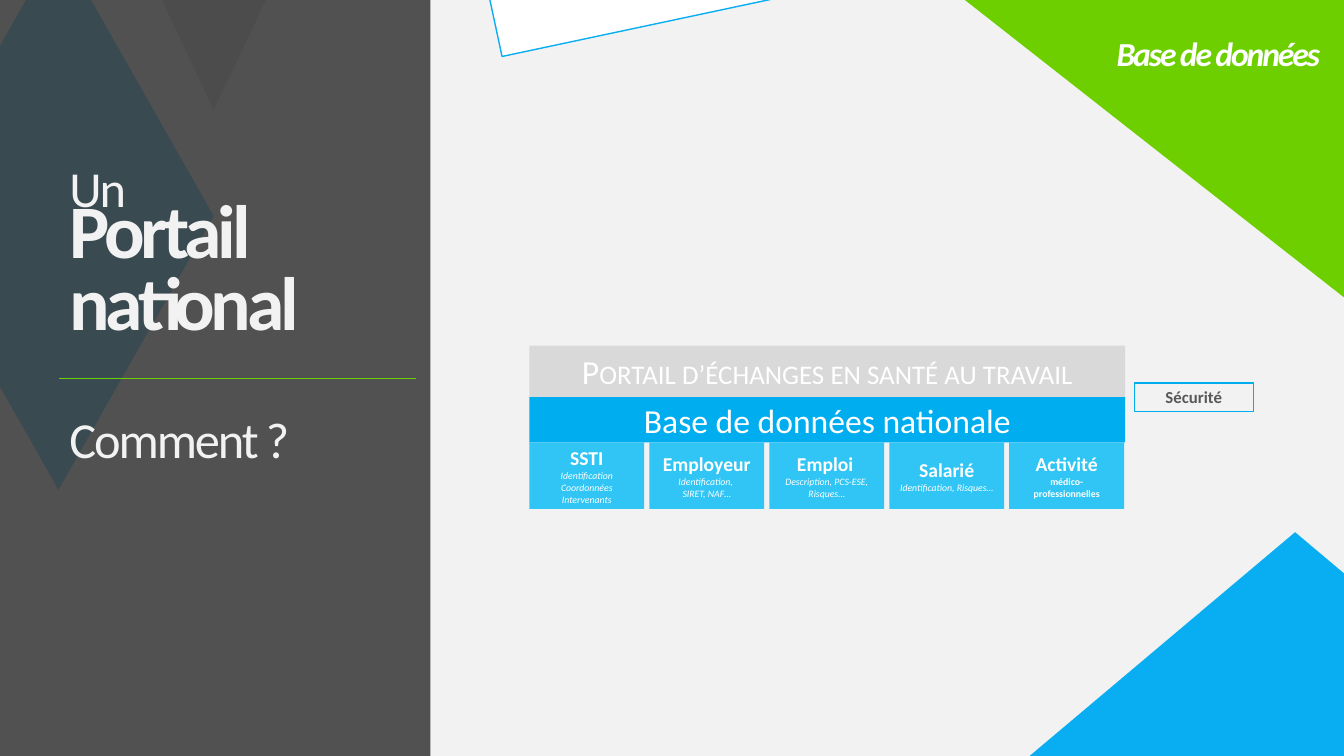
import pptx
import pptx.dml.color
import pptx.enum.shapes
import pptx.enum.text
import pptx.oxml.ns
import pptx.util
from lxml import etree

Inches = pptx.util.Inches
Pt = pptx.util.Pt
rgb = pptx.dml.color.RGBColor.from_string
qn = pptx.oxml.ns.qn
Preset = pptx.enum.shapes.MSO_SHAPE
Align = pptx.enum.text.PP_ALIGN
Anchor = pptx.enum.text.MSO_ANCHOR

GREEN, BLUE, SKY, PALE_BLUE = "6DCF00", "09AEF2", "00ADEE", "30C5F4"
WHITE, LIGHT = "FFFFFF", "F2F2F2"


def style(shape, fill=None, line=None):
    """Set fill and outline, without shadow."""
    shape.shadow.inherit = False
    if fill:
        shape.fill.solid()
        shape.fill.fore_color.rgb = rgb(fill)
    else:
        shape.fill.background()
    if line:
        shape.line.color.rgb = rgb(line)
        shape.line.width = Pt(1)
    else:
        shape.line.fill.background()
    return shape


def add_text(shape, text, size, color=WHITE, bold=False, italic=False, align=Align.CENTER,
             spacing=0, line_spacing=None, small_caps=False, same_paragraph=False):
    """Append text as a new paragraph, or to the last one; a newline is a line break."""
    frame = shape.text_frame
    frame.word_wrap = True
    paragraph = frame.paragraphs[-1]
    if paragraph.runs and not same_paragraph:
        paragraph = frame.add_paragraph()
    paragraph.alignment = align
    if line_spacing:
        paragraph.line_spacing = line_spacing
    for index, part in enumerate(text.split("\n")):
        if index:
            paragraph.add_line_break()
        run = paragraph.add_run()
        run.text = part
        run.font.name = "Calibri"
        run.font.size = Pt(size)
        run.font.bold = bold
        run.font.italic = italic
        run.font.color.rgb = rgb(color)
        properties = run._r.get_or_add_rPr()
        if spacing:
            properties.set("spc", str(int(spacing * 100)))
        if small_caps:
            properties.set("cap", "small")


presentation = pptx.Presentation()
presentation.slide_width = Inches(13.33)
presentation.slide_height = Inches(7.5)
slide = presentation.slides.add_slide(presentation.slide_layouts[6])
slide.background.fill.solid()
slide.background.fill.fore_color.rgb = rgb(LIGHT)
shapes = slide.shapes

# Grey arrowhead and white sheet at the top
outlines = [
    ([(0.26, -2.85), (2.12, -1.86), (3.99, -2.85), (2.12, 1.09)], "BFBFBF", None),
    ([(4.98, 0.56), (3.53, -6.18), (12.02, -5.58), (15.57, -1.69)], WHITE, BLUE),
]
for points, fill, line in outlines:
    corners = [(Inches(x), Inches(y)) for x, y in points]
    builder = shapes.build_freeform(*corners[0])
    builder.add_line_segments(corners[1:], close=True)
    style(builder.convert_to_shape(), fill, line)

# Green corner, blue diamonds and dark side panel
decorations = [
    (Preset.RIGHT_TRIANGLE, (9.57, 0, 3.76, 2.95), GREEN, 180),
    (Preset.DIAMOND, (-0.96, -0.57, 3.08, 5.43), BLUE, 0),
    (Preset.DIAMOND, (10.2, 5.28, 5.29, 4.46), BLUE, 0),
    (Preset.RECTANGLE, (0, 0, 4.27, 7.5), "404040", 0),
]
for preset, box, fill, rotation in decorations:
    panel = style(shapes.add_shape(preset, *map(Inches, box)), fill)
    panel.rotation = rotation
panel_color = panel.fill._xPr.find(qn("a:solidFill"))[0]
etree.SubElement(panel_color, qn("a:alpha"), val="90000")

# Titles
titles = [
    ((0.59, 1.5, 3.77, 0.71), ["Un"], Anchor.MIDDLE,
     dict(size=36, color=LIGHT, spacing=-1.5, align=Align.LEFT)),
    ((0.59, 1.92, 3.68, 1.57), ["Portail", "national"], Anchor.MIDDLE,
     dict(size=54, color=LIGHT, bold=True, spacing=-3, line_spacing=0.8, align=Align.LEFT)),
    ((0.59, 3.99, 3.84, 0.71), ["Comment ?"], Anchor.MIDDLE,
     dict(size=36, color=LIGHT, spacing=-1.5, align=Align.LEFT)),
    ((9.25, 0.28, 3.94, 0.5), ["Base de données"], Anchor.TOP,
     dict(size=24, bold=True, italic=True, spacing=-1.5, align=Align.RIGHT)),
]
for box, lines, anchor, text_format in titles:
    title = shapes.add_textbox(*map(Inches, box))
    title.text_frame.vertical_anchor = anchor
    title.text_frame.auto_size = pptx.enum.text.MSO_AUTO_SIZE.SHAPE_TO_FIT_TEXT
    for text in lines:
        add_text(title, text, **text_format)

# Green rule under the title
rule = shapes.add_connector(pptx.enum.shapes.MSO_CONNECTOR.STRAIGHT,
                            Inches(0.59), Inches(3.75), Inches(4.13), Inches(3.75))
rule.line.color.rgb = rgb(GREEN)
rule.line.width = Pt(0.5)
etree.SubElement(rule._element.spPr, qn("a:effectLst"))

# Portal and database bands
bands = [
    (3.43, 0.51, "D9D9D9", "Portail d’échanges en santé au travail", True),
    (3.94, 0.45, SKY, "Base de données nationale", False),
]
for top, height, fill, text, small_caps in bands:
    band = style(shapes.add_shape(Preset.RECTANGLE, Inches(5.25), Inches(top),
                                  Inches(5.91), Inches(height)), fill)
    band.text_frame.vertical_anchor = Anchor.MIDDLE
    add_text(band, text, size=24, small_caps=small_caps)

# Data blocks
blocks = [
    ("SSTI", ["Identification", "Coordonnées", "Intervenants"]),
    ("Employeur", ["Identification, \nSIRET, NAF…"]),
    ("Emploi", ["Description, PCS-ESE, Risques…"]),
    ("Salarié", ["Identification, Risques…"]),
    ("Activité", []),
]
for column, (heading, details) in enumerate(blocks):
    block = style(shapes.add_shape(Preset.RECTANGLE, Inches(5.25 + 1.19 * column), Inches(4.39),
                                   Inches(1.14), Inches(0.66)), PALE_BLUE)
    block.text_frame.vertical_anchor = Anchor.MIDDLE
    add_text(block, heading, size=14, bold=True)
    if heading in ("Emploi", "Activité"):
        add_text(block, " ", size=10, bold=True, same_paragraph=True)
    for detail in details:
        add_text(block, detail, size=7, italic=True)
add_text(block, "médico-professionnelles", size=7, bold=True, same_paragraph=True)

# Security label
security = style(shapes.add_shape(Preset.RECTANGLE, Inches(11.25), Inches(3.8),
                                  Inches(1.18), Inches(0.28)), line=SKY)
security.text_frame.vertical_anchor = Anchor.MIDDLE
security.text_frame.margin_left = security.text_frame.margin_right = 0
add_text(security, "Sécurité", size=12, color="58585A", bold=True)

presentation.save("out.pptx")
